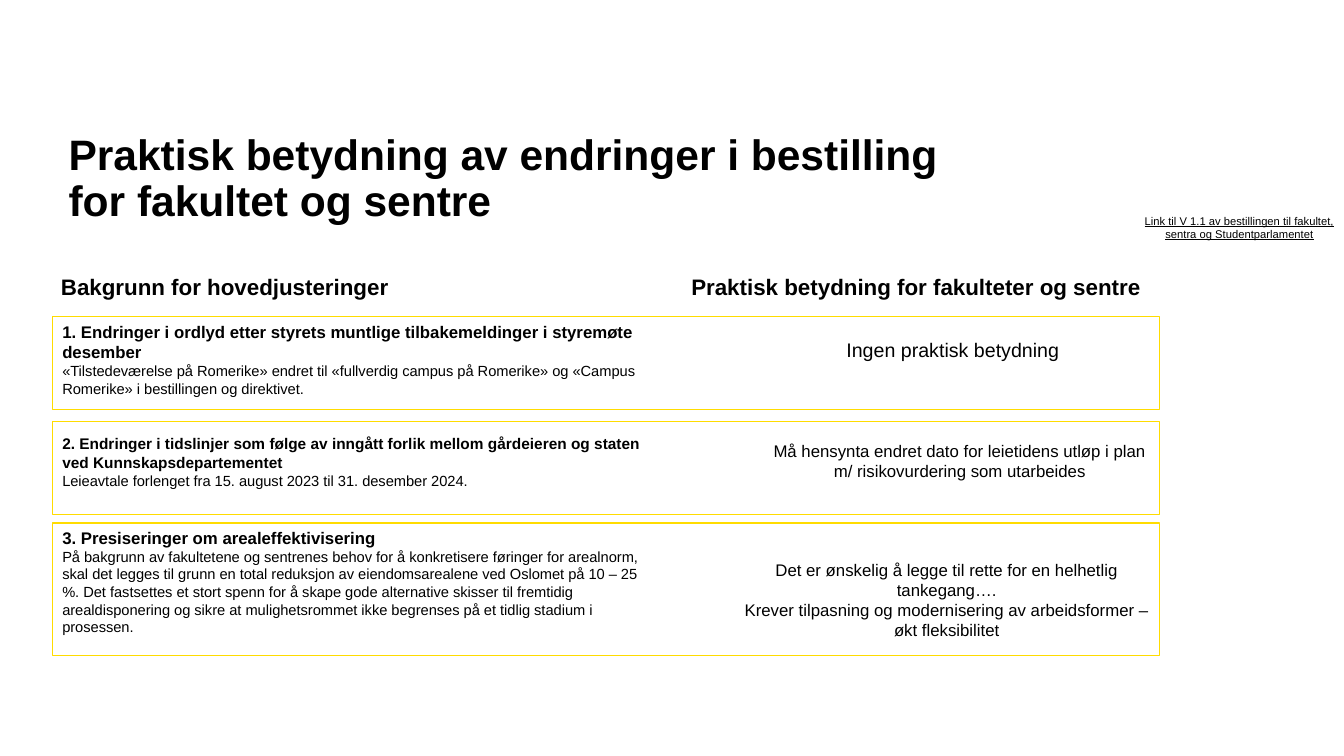
"""Build the slide on what the changed order means for faculties and centres."""
from pptx import Presentation
from pptx import util as u
from pptx.dml.color import RGBColor
from pptx.enum import shapes, text

COLOURS = {"ink": "000000", "frame": "FFDC00"}
LEFT, CENTRE = text.PP_ALIGN.LEFT, text.PP_ALIGN.CENTER
INSET_X, INSET_Y = 0.25, 0.13


def add_text(place, paragraphs, align=LEFT, inset=True, underline=False):
    """Add a text box; each paragraph is (lines, size, bold)."""
    frame = slide.shapes.add_textbox(*map(u.Cm, place)).text_frame
    frame.word_wrap = True
    frame.margin_left = frame.margin_right = u.Cm(INSET_X if inset else 0)
    frame.margin_top = frame.margin_bottom = u.Cm(INSET_Y if inset else 0)
    for number, (lines, size, bold) in enumerate(paragraphs):
        paragraph = frame.add_paragraph() if number else frame.paragraphs[0]
        paragraph.alignment = align
        for position, line in enumerate(lines):
            if position:
                paragraph.add_line_break()
            run = paragraph.add_run()
            run.text = line
            run.font.name = "Arial"
            run.font.size = u.Pt(size)
            run.font.bold = bold
            run.font.underline = underline
            run.font.color.rgb = RGBColor.from_string(COLOURS["ink"])
    return frame


deck = Presentation()
deck.slide_width, deck.slide_height = u.Cm(33.87), u.Cm(19.05)
slide = deck.slides.add_slide(deck.slide_layouts[6])

title = add_text(
    (1.73, 4.39, 30.02, 1.3),
    [(["Praktisk betydning av endringer i bestilling", "for fakultet og sentre"], 30.4, True)],
    inset=False)
title.vertical_anchor = text.MSO_ANCHOR.BOTTOM
title.paragraphs[0].line_spacing = 0.9

add_text(
    (28.58, 5.26, 5.31, 0.94),
    [(["Link til V 1.1 av bestillingen til fakultet, sentra og Studentparlamentet"], 8, False)],
    CENTRE, underline=True)

for heading_left, heading in [(-0.48, "Bakgrunn for hovedjusteringer"),
                              (16.94, "Praktisk betydning for fakulteter og sentre")]:
    add_text((heading_left, 6.88, 12.29, 0.76), [([heading], 16, True)], CENTRE, inset=False)

adjustments = [
    {"frame": (7.98, 2.34), "background_top": 7.98, "topic_size": 12,
     "topic": "1. Endringer i ordlyd etter styrets muntlige tilbakemeldinger i styremøte desember",
     "background": "«Tilstedeværelse på Romerike» endret til «fullverdig campus på Romerike» "
                   "og «Campus Romerike» i bestillingen og direktivet.",
     "meaning_place": (21.08, 8.38, 9.68, 0.86), "align": LEFT,
     "meaning": [(["Ingen praktisk betydning"], 14, False)]},
    {"frame": (10.62, 2.34), "background_top": 10.82, "topic_size": 11,
     "topic": "2. Endringer i tidslinjer som følge av inngått forlik mellom gårdeieren og staten "
              "ved Kunnskapsdepartementet",
     "background": "Leieavtale forlenget fra 15. august 2023 til 31. desember 2024.",
     "meaning_place": (18.82, 10.97, 10.74, 1.27), "align": CENTRE,
     "meaning": [(["Må hensynta endret dato for leietidens utløp i plan",
                   "m/ risikovurdering som utarbeides"], 12, False)]},
    {"frame": (13.18, 3.35), "background_top": 13.16, "topic_size": 12,
     "topic": "3. Presiseringer om arealeffektivisering",
     "background": "På bakgrunn av fakultetene og sentrenes behov for å konkretisere føringer for "
                   "arealnorm, skal det legges til grunn en total reduksjon av eiendomsarealene ved "
                   "Oslomet på 10 – 25 %. Det fastsettes et stort spenn for å skape gode alternative "
                   "skisser til fremtidig arealdisponering og sikre at mulighetsrommet ikke begrenses "
                   "på et tidlig stadium i prosessen.",
     "meaning_place": (18.49, 13.97, 10.74, 2.31), "align": CENTRE,
     "meaning": [(["Det er ønskelig å legge til rette for en helhetlig tankegang…."], 12, False),
                 (["Krever tilpasning og modernisering av arbeidsformer – økt fleksibilitet"],
                  12, False)]},
]

for adjustment in adjustments:
    top, height = adjustment["frame"]
    border = slide.shapes.add_shape(
        shapes.MSO_SHAPE.RECTANGLE, u.Cm(1.32), u.Cm(top), u.Cm(27.91), u.Cm(height))
    border.shadow.inherit = False
    border.fill.background()
    border.line.color.rgb = RGBColor.from_string(COLOURS["frame"])
    border.line.width = u.Pt(0.75)
    add_text((1.32, adjustment["background_top"], 15.42, height),
             [([adjustment["topic"]], adjustment["topic_size"], True),
              ([adjustment["background"]], 10.5, False)])
    add_text(adjustment["meaning_place"], adjustment["meaning"], adjustment["align"])

deck.save("out.pptx")
